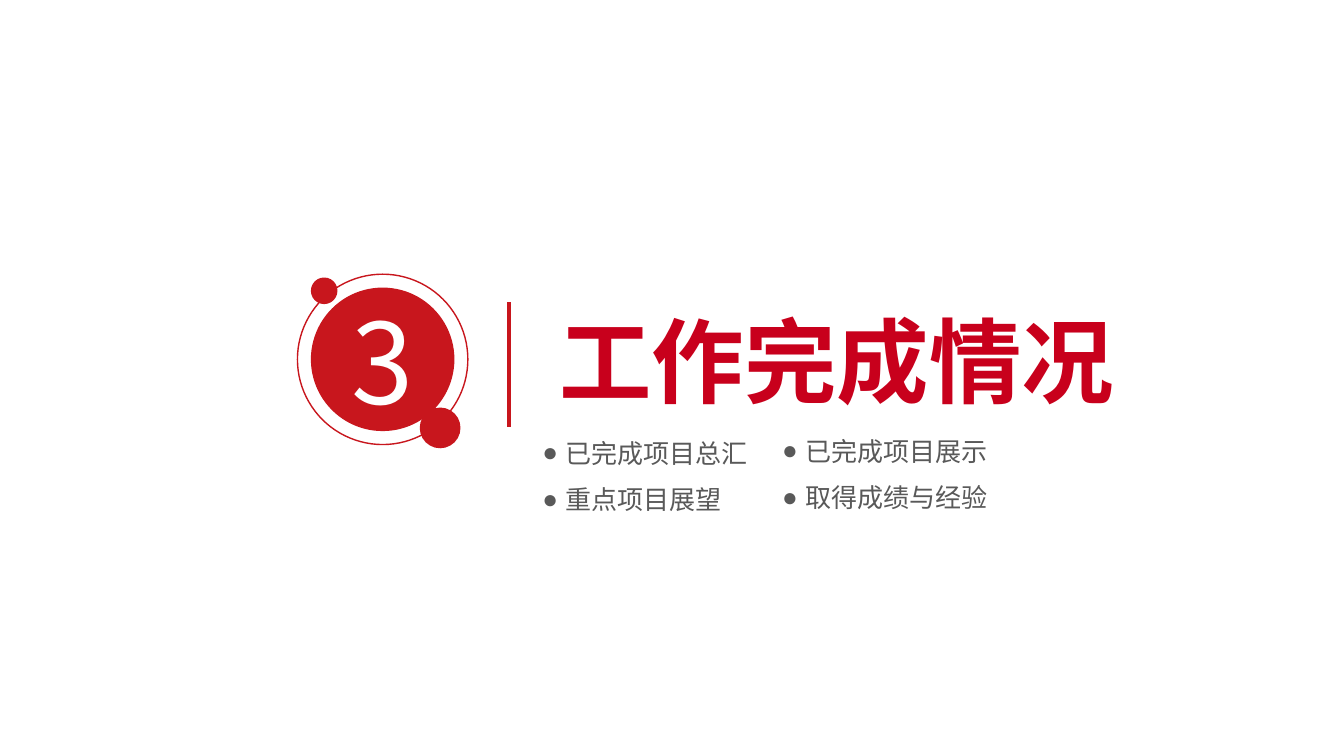
from lxml.etree import SubElement
from pptx import Presentation
from pptx.dml.color import RGBColor
from pptx.enum.shapes import MSO_CONNECTOR as Connector, MSO_SHAPE as Shape
from pptx.enum.text import MSO_ANCHOR as Anchor, MSO_AUTO_SIZE as AutoSize, PP_ALIGN as Align
from pptx.oxml.ns import qn
from pptx.util import Inches, Pt

FONT = "Noto Sans CJK SC"
BULLET_FONT = "Arial"
RED = "C8161D"
TITLE_RED = "C8001C"
GREY = "595959"
WHITE = "FFFFFF"


def colour(hex_value):
    return RGBColor.from_string(hex_value)


def style(paragraph, size, hex_value, bold=False):
    font = paragraph.font
    font.name = FONT
    font.size = Pt(size)
    font.bold = bold
    font.color.rgb = colour(hex_value)
    defaults = paragraph._p.pPr.find(qn("a:defRPr"))
    SubElement(defaults, qn("a:ea"), typeface=FONT)


def add_circle(slide, left, top, diameter, filled=True):
    circle = slide.shapes.add_shape(
        Shape.OVAL, Inches(left), Inches(top), Inches(diameter), Inches(diameter))
    circle.shadow.inherit = False
    if filled:
        circle.fill.solid()
        circle.fill.fore_color.rgb = colour(RED)
    else:
        circle.fill.background()
    circle.line.color.rgb = colour(RED)
    circle.line.width = Pt(1)
    return circle


def add_number(circle, number):
    frame = circle.text_frame
    frame.vertical_anchor = Anchor.MIDDLE
    paragraph = frame.paragraphs[0]
    paragraph.text = number
    paragraph.alignment = Align.CENTER
    style(paragraph, 80, WHITE)


def add_divider(slide, x, top, bottom):
    divider = slide.shapes.add_connector(
        Connector.STRAIGHT, Inches(x), Inches(top), Inches(x), Inches(bottom))
    divider.line.color.rgb = colour(RED)
    divider.line.width = Pt(3)
    SubElement(divider._element.spPr, qn("a:effectLst"))


def add_text(slide, text, left, top, width, height):
    box = slide.shapes.add_textbox(Inches(left), Inches(top), Inches(width), Inches(height))
    frame = box.text_frame
    frame.word_wrap = False
    frame.auto_size = AutoSize.SHAPE_TO_FIT_TEXT
    paragraph = frame.paragraphs[0]
    paragraph.text = text
    return paragraph


def add_topic(slide, text, left, top):
    width = 0.2 + 0.23 + 0.26 * len(text)
    paragraph = add_text(slide, text, left, top, width, 0.41)
    properties = paragraph._p.get_or_add_pPr()
    indent = Inches(0.23)
    properties.set("marL", str(indent))
    properties.set("indent", str(-indent))
    SubElement(properties, qn("a:buFont"), typeface=BULLET_FONT)
    SubElement(properties, qn("a:buChar"), char="●")
    style(paragraph, 18.6, GREY)


def main():
    deck = Presentation()
    deck.slide_width = Inches(13.33)
    deck.slide_height = Inches(7.5)
    slide = deck.slides.add_slide(deck.slide_layouts[6])

    add_divider(slide, 5.05, 3, 4.24)
    add_number(add_circle(slide, 3.09, 2.86, 1.41), "3")
    add_circle(slide, 2.95, 2.72, 1.69, filled=False)
    add_circle(slide, 4.17, 4.05, 0.39)
    add_circle(slide, 3.09, 2.76, 0.25)

    title = add_text(slide, "工作完成情况", 5.45, 2.97, 5.76, 1.21)
    style(title, 66, TITLE_RED, bold=True)

    topic_columns = [
        (5.28, 4.29, ["已完成项目总汇", "重点项目展望"]),
        (7.66, 4.27, ["已完成项目展示", "取得成绩与经验"]),
    ]
    for left, top, topics in topic_columns:
        for row, topic in enumerate(topics):
            add_topic(slide, topic, left, top + 0.46 * row)

    deck.save("out.pptx")


if __name__ == "__main__":
    main()
